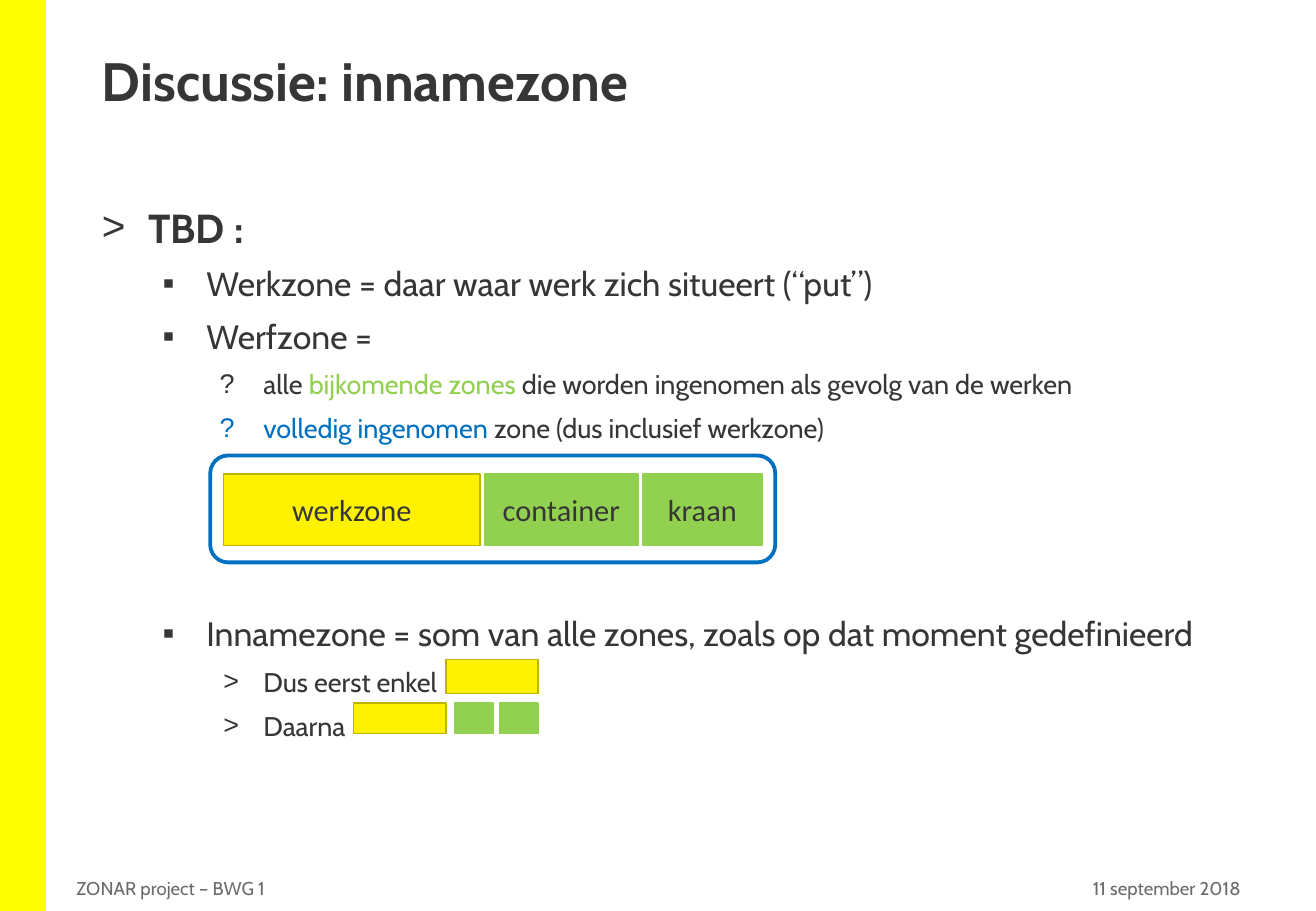
from dataclasses import dataclass

from lxml import etree
from pptx import Presentation
from pptx import util as u
from pptx.dml.color import RGBColor
from pptx.enum import shapes, text
from pptx.oxml.ns import qn

PX = 9144  # EMU per px, 100 px to the inch


@dataclass(frozen=True)
class Theme:
    ink: str = "373636"
    muted: str = "6B6B6B"
    band: str = "FFFF00"
    yellow: str = "FFF200"
    yellow_edge: str = "BDB300"
    green: str = "92D050"
    blue: str = "0070C0"
    font: str = "Cabin"
    box_font: str = "Calibri"
    bullet_font: str = "Arial"
    title: int = 32
    head: int = 24
    item: int = 20
    label: int = 18
    detail: int = 16
    footer: int = 11


T = Theme()


@dataclass(frozen=True)
class Level:
    bullet: str
    indent: int
    hang: int
    size: int
    bold: bool = False


@dataclass(frozen=True)
class Line:
    level: Level
    runs: tuple[tuple[str, str], ...]
    before: int = 7


@dataclass(frozen=True)
class Zone:
    left: int
    top: int
    width: int
    height: int
    fill: str
    edge: str
    label: str = ""


HEAD = Level(">", 38, 38, T.head, bold=True)
ITEM = Level("▪", 86, 36, T.item)
OPTION = Level("?", 133, 36, T.detail)
STEP = Level(">", 133, 33, T.detail)

LINES = (
    Line(HEAD, (("TBD :", T.ink),)),
    Line(ITEM, (("Werkzone = daar waar werk zich situeert (“put”)", T.ink),)),
    Line(ITEM, (("Werfzone =", T.ink),)),
    Line(OPTION, (("alle ", T.ink), ("bijkomende zones", T.green),
                  (" die worden ingenomen als gevolg van de werken", T.ink))),
    Line(OPTION, (("volledig ingenomen ", T.blue),
                  ("zone (dus inclusief werkzone)", T.ink))),
    Line(ITEM, (("Innamezone = som van alle zones, zoals op dat moment gedefinieerd",
                 T.ink),), before=100),
    Line(STEP, (("Dus eerst enkel", T.ink),)),
    Line(STEP, (("Daarna", T.ink),)),
)


def work(left: int, top: int, width: int, height: int, label: str = "") -> Zone:
    return Zone(left, top, width, height, T.yellow, T.yellow_edge, label)


def extra(left: int, top: int, width: int, height: int, label: str = "") -> Zone:
    return Zone(left, top, width, height, T.green, T.green, label)


ZONES = (
    work(184, 390, 211, 59, "werkzone"),
    extra(399, 390, 126, 59, "container"),
    extra(529, 390, 98, 59, "kraan"),
    work(367, 543, 76, 28),
    work(291, 579, 76, 25),
    extra(374, 579, 32, 25),
    extra(411, 579, 32, 25),
)


def add_run(p, words: str, *, size: int, color: str = T.ink,
            font: str = T.font, bold: bool = False) -> None:
    r = p.add_run()
    r.text = words
    r.font.name = font
    r.font.size = u.Pt(size)
    r.font.bold = bold
    r.font.color.rgb = RGBColor.from_string(color)


def add_box(s, left: int, top: int, width: int, height: int,
            anchor=text.MSO_ANCHOR.TOP):
    sp = s.shapes.add_textbox(left * PX, top * PX, width * PX, height * PX)
    tf = sp.text_frame
    tf.word_wrap = True
    tf.vertical_anchor = anchor
    return tf


def add_shape(s, kind, left: int, top: int, width: int, height: int, *,
              fill: str = "", edge: str = "", weight: float = 1):
    """Add a flat shape; an empty fill or edge colour means none."""
    sp = s.shapes.add_shape(kind, left * PX, top * PX, width * PX, height * PX)
    sp.shadow.inherit = False
    if fill:
        sp.fill.solid()
        sp.fill.fore_color.rgb = RGBColor.from_string(fill)
    else:
        sp.fill.background()
    if edge:
        sp.line.color.rgb = RGBColor.from_string(edge)
        sp.line.width = u.Pt(weight)
    else:
        sp.line.fill.background()
    return sp


def set_bullet(p, level: Level) -> None:
    pPr = p._p.get_or_add_pPr()
    pPr.set("marL", str(level.indent * PX))
    pPr.set("indent", str(-level.hang * PX))
    etree.SubElement(pPr, qn("a:buFont"), typeface=T.bullet_font)
    etree.SubElement(pPr, qn("a:buChar"), char=level.bullet)


def add_lines(s) -> None:
    tf = add_box(s, 74, 162, 934, 546)
    for i, line in enumerate(LINES):
        p = tf.add_paragraph() if i else tf.paragraphs[0]
        p.space_before = u.Pt(line.before)
        set_bullet(p, line.level)
        for words, color in line.runs:
            add_run(p, words, size=line.level.size, color=color,
                    bold=line.level.bold)


def add_zone(s, zone: Zone) -> None:
    sp = add_shape(s, shapes.MSO_SHAPE.RECTANGLE, zone.left, zone.top,
                   zone.width, zone.height, fill=zone.fill, edge=zone.edge)
    if zone.label:
        tf = sp.text_frame
        tf.vertical_anchor = text.MSO_ANCHOR.MIDDLE
        p = tf.paragraphs[0]
        p.alignment = text.PP_ALIGN.CENTER
        add_run(p, zone.label, size=T.label, font=T.box_font)


def add_footer(s, words: str, left: int, width: int, align) -> None:
    tf = add_box(s, left, 722, width, 19, text.MSO_ANCHOR.MIDDLE)
    p = tf.paragraphs[0]
    p.alignment = align
    add_run(p, words, size=T.footer, color=T.muted)


def main() -> None:
    prs = Presentation()
    prs.slide_width, prs.slide_height = 1083 * PX, 750 * PX
    s = prs.slides.add_slide(prs.slide_layouts[6])

    add_shape(s, shapes.MSO_SHAPE.RECTANGLE, 0, 0, 38, 750, fill=T.band)
    p = add_box(s, 74, 40, 934, 108).paragraphs[0]
    p.line_spacing = 0.9
    add_run(p, "Discussie: innamezone", size=T.title, bold=True)
    add_footer(s, "ZONAR project – BWG 1", 53, 665, text.PP_ALIGN.LEFT)
    add_footer(s, "11 september 2018", 718, 313, text.PP_ALIGN.RIGHT)

    add_lines(s)
    for zone in ZONES:
        add_zone(s, zone)
    add_shape(s, shapes.MSO_SHAPE.ROUNDED_RECTANGLE, 173, 375, 465, 88,
              edge=T.blue, weight=2.25)
    prs.save("out.pptx")


if __name__ == "__main__":
    main()
